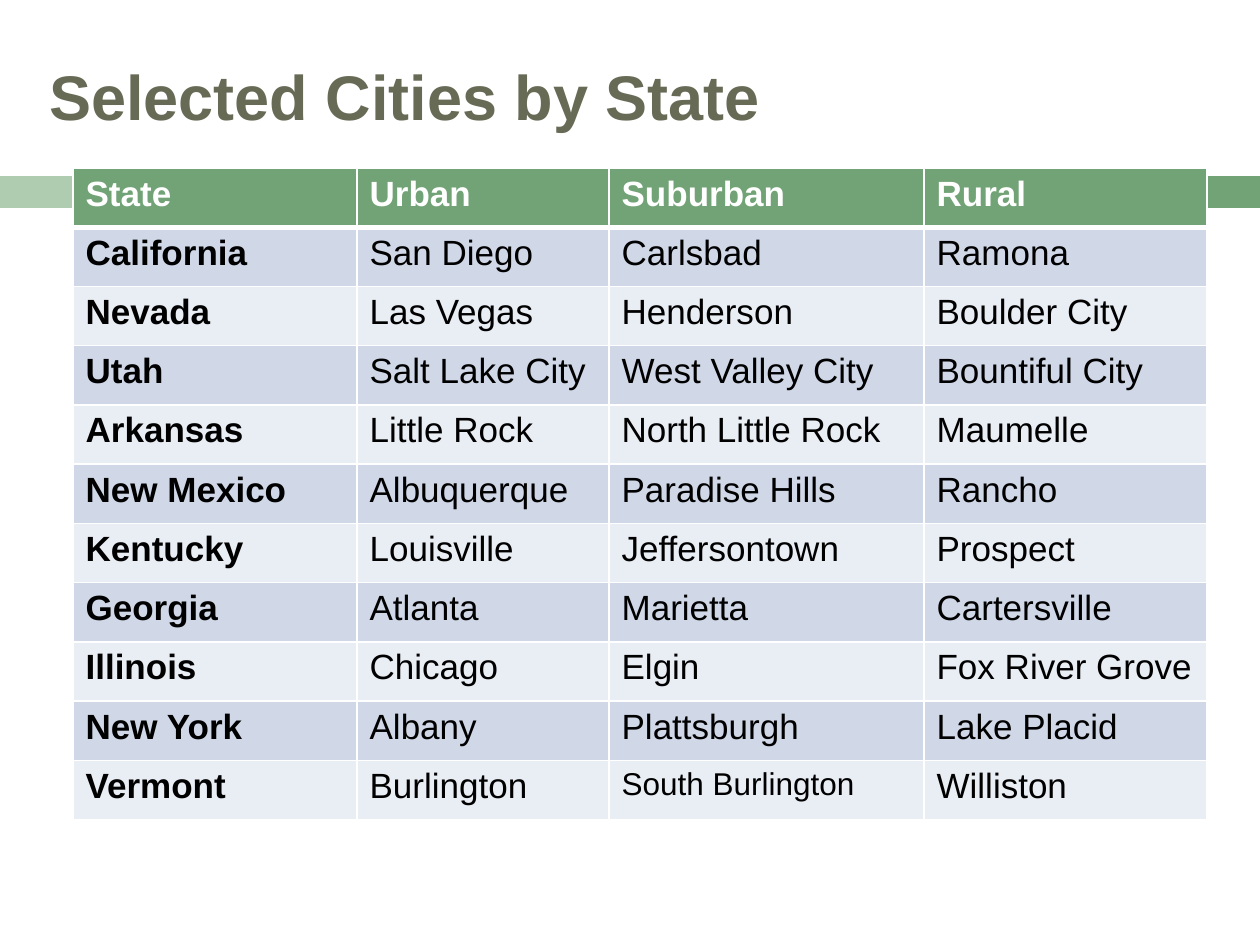
from lxml import etree
from pptx import Presentation
from pptx.dml.color import RGBColor
from pptx.enum.shapes import MSO_SHAPE
from pptx.enum.text import MSO_ANCHOR
from pptx.oxml.ns import qn
from pptx.util import Emu, Pt

RECTANGLE = MSO_SHAPE.RECTANGLE
MIDDLE = MSO_ANCHOR.MIDDLE

WHITE = RGBColor(0xFF, 0xFF, 0xFF)
BLACK = RGBColor(0x00, 0x00, 0x00)
OLIVE = RGBColor(0x67, 0x6A, 0x55)
GREEN = RGBColor(0x72, 0xA3, 0x76)
LIGHT_GREEN = RGBColor(0xB0, 0xCC, 0xB0)
DARK_BAND = RGBColor(0xD0, 0xD8, 0xE8)
LIGHT_BAND = RGBColor(0xE9, 0xED, 0xF4)

PX_PER_INCH = 126
EMU_PER_INCH = 914400

CITIES = [
    ("State", "Urban", "Suburban", "Rural"),
    ("California", "San Diego", "Carlsbad", "Ramona"),
    ("Nevada", "Las Vegas", "Henderson", "Boulder City"),
    ("Utah", "Salt Lake City", "West Valley City", "Bountiful City"),
    ("Arkansas", "Little Rock", "North Little Rock", "Maumelle"),
    ("New Mexico", "Albuquerque", "Paradise Hills", "Rancho"),
    ("Kentucky", "Louisville", "Jeffersontown", "Prospect"),
    ("Georgia", "Atlanta", "Marietta", "Cartersville"),
    ("Illinois", "Chicago", "Elgin", "Fox River Grove"),
    ("New York", "Albany", "Plattsburgh", "Lake Placid"),
    ("Vermont", "Burlington", "South Burlington", "Williston"),
]
COLUMN_WIDTHS = (284, 252, 315, 283)
SMALLER_TEXT = {"South Burlington": 18}


def px(length):
    return Emu(round(length * EMU_PER_INCH / PX_PER_INCH))


class SlideBuilder:
    font = "Arial"
    table_size = 20

    def __init__(self, slide):
        self.slide = slide

    def style(self, frame, size, color, bold):
        for para in frame.paragraphs:
            for span in para.runs:
                span.font.name = self.font
                span.font.size = Pt(size)
                span.font.bold = bold
                span.font.color.rgb = color

    def bar(self, left, top, width, height, color):
        box = self.slide.shapes.add_shape(
            RECTANGLE, px(left), px(top), px(width), px(height))
        box.shadow.inherit = False
        box.fill.solid()
        box.fill.fore_color.rgb = color
        box.line.fill.background()

    def title(self, text, left, top, width, height, size):
        box = self.slide.shapes.add_textbox(
            px(left), px(top), px(width), px(height))
        frame = box.text_frame
        frame.word_wrap = True
        frame.vertical_anchor = MIDDLE
        frame.text = text
        self.style(frame, size, OLIVE, True)

    def borders(self, cell, widths):
        """Draw white cell borders; they must come before the fill in the XML."""
        properties = cell._tc.get_or_add_tcPr()
        for index, (side, width) in enumerate(widths.items()):
            line = etree.Element(qn(f"a:ln{side}"), w=str(Pt(width)))
            fill = etree.SubElement(line, qn("a:solidFill"))
            etree.SubElement(fill, qn("a:srgbClr"), val=str(WHITE))
            properties.insert(index, line)

    def table(self, rows, left, top, column_widths, height):
        table = self.slide.shapes.add_table(
            len(rows), len(column_widths), px(left), px(top),
            px(sum(column_widths)), px(height)).table
        for column, width in zip(table.columns, column_widths):
            column.width = px(width)
        for row_index, row in enumerate(rows):
            header = row_index == 0
            band = DARK_BAND if row_index % 2 else LIGHT_BAND
            widths = {"L": 1, "R": 1,
                      "T": 3 if row_index == 1 else 1,
                      "B": 3 if header else 1}
            for column_index, text in enumerate(row):
                cell = table.cell(row_index, column_index)
                cell.fill.solid()
                cell.fill.fore_color.rgb = GREEN if header else band
                self.borders(cell, widths)
                cell.text_frame.text = text
                self.style(cell.text_frame,
                           SMALLER_TEXT.get(text, self.table_size),
                           WHITE if header else BLACK,
                           header or column_index == 0)


def main():
    deck = Presentation()
    deck.slide_width = px(1260)
    deck.slide_height = px(945)
    page = SlideBuilder(deck.slides.add_slide(deck.slide_layouts[6]))

    # Accent bars behind the table
    page.bar(0, 176, 73, 32, LIGHT_GREEN)
    page.bar(82, 176, 1178, 32, GREEN)

    # Title
    page.title("Selected Cities by State", 37, 16, 1071, 158, 36)

    # Cities table
    page.table(CITIES, 73, 168, COLUMN_WIDTHS, 652)

    deck.save("out.pptx")


if __name__ == "__main__":
    main()
